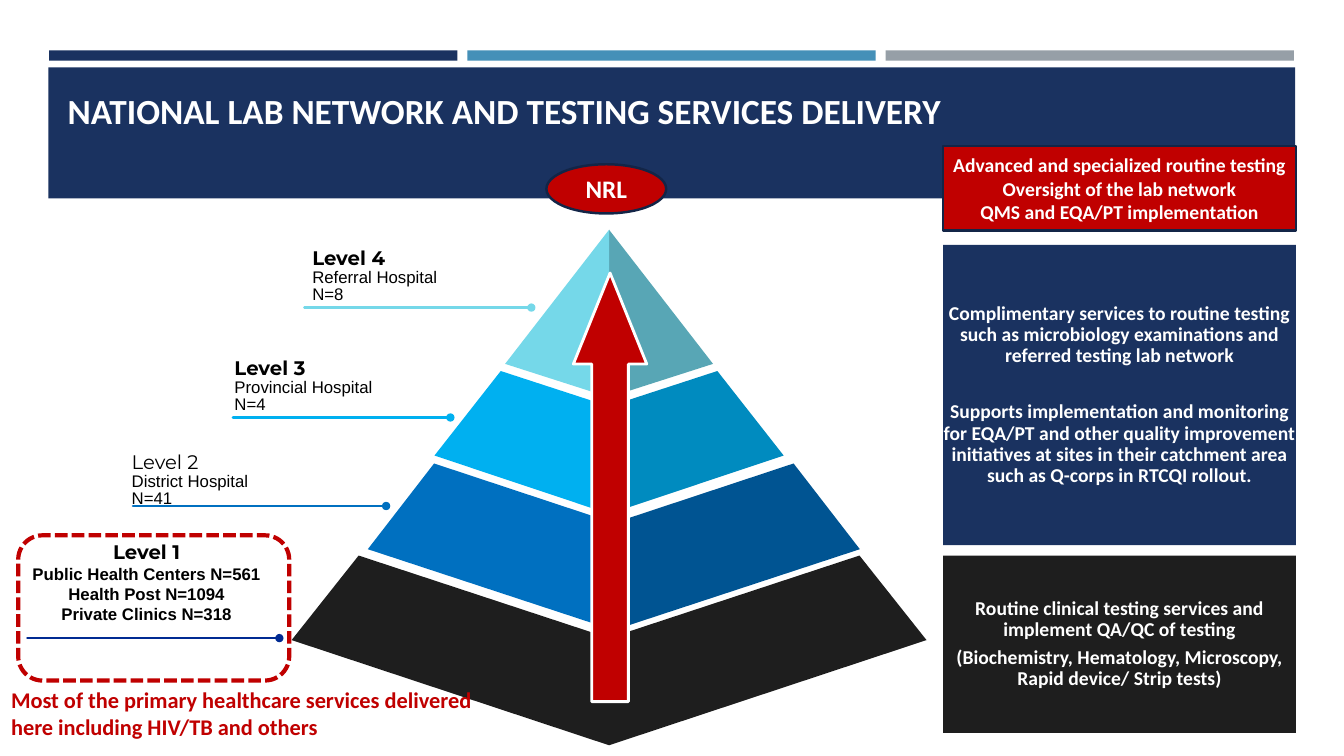
"""Build the slide on the national laboratory network and its testing services."""
from dataclasses import dataclass

from lxml import etree
from pptx import Presentation, util as u
from pptx.dml.color import RGBColor
from pptx.enum import dml, shapes, text
from pptx.oxml.ns import qn


@dataclass(frozen=True)
class Theme:
    navy: str = "1A3260"
    steel: str = "4590B8"
    grey: str = "969FA7"
    outline: str = "132547"
    red: str = "C00000"
    white: str = "FFFFFF"
    black: str = "000000"
    charcoal: str = "1E1E1E"
    ink_blue: str = "002A92"
    blue: str = "0070C0"
    deep_blue: str = "005492"
    sky: str = "00B0F0"
    deep_sky: str = "008BBF"
    aqua: str = "75D8E9"
    deep_aqua: str = "58A6B5"
    body_font: str = "Calibri"
    level_font: str = "Montserrat"
    detail_font: str = "Arial"
    title_size: float = 25.2
    badge_size: int = 18
    caption_size: int = 16
    panel_size: int = 14
    level_size: int = 14
    detail_size: int = 12


theme = Theme()


def paint(shape, fill=None, line=None, width=1.75):
    shape.shadow.inherit = False
    if fill:
        shape.fill.solid()
        shape.fill.fore_color.rgb = RGBColor.from_string(fill)
    else:
        shape.fill.background()
    if line:
        shape.line.color.rgb = RGBColor.from_string(line)
        shape.line.width = u.Pt(width)
    else:
        shape.line.fill.background()


def write(frame, lines, size, color=theme.white, font=theme.body_font, bold=True,
          align=text.PP_ALIGN.CENTER, spacing=1.0, gap=0):
    frame.word_wrap = True
    for index, line in enumerate(lines):
        paragraph = frame.paragraphs[0] if index == 0 else frame.add_paragraph()
        paragraph.text = line
        paragraph.alignment = align
        paragraph.line_spacing = spacing
        paragraph.space_before = u.Pt(gap if index else 0)
        paragraph.font.size = u.Pt(size)
        paragraph.font.name = font
        paragraph.font.bold = bold
        paragraph.font.color.rgb = RGBColor.from_string(color)


deck = Presentation()
deck.slide_width, deck.slide_height = u.Cm(33.87), u.Cm(19.05)
slide = deck.slides.add_slide(deck.slide_layouts[5])
canvas = slide.shapes
kinds = shapes.MSO_SHAPE

for column, color in enumerate((theme.navy, theme.steel, theme.grey)):
    bar = canvas.add_shape(kinds.RECTANGLE, u.Cm(1.24 + 10.54 * column), u.Cm(1.27),
                           u.Cm(10.29), u.Cm(0.26))
    paint(bar, color)
banner = canvas.add_shape(kinds.RECTANGLE, u.Cm(1.22), u.Cm(1.7), u.Cm(31.42), u.Cm(3.3))
paint(banner, theme.navy)

title = canvas.title
title.left, title.top, title.width, title.height = u.Cm(1.45), u.Cm(1.42), u.Cm(31.22), u.Cm(2.03)
title.text_frame.vertical_anchor = text.MSO_ANCHOR.BOTTOM
write(title.text_frame, ["NATIONAL LAB NETWORK AND TESTING SERVICES DELIVERY"],
      theme.title_size, align=text.PP_ALIGN.LEFT)
title.element.getparent().append(title.element)

# Tier columns: seam x, half widths, then side and seam heights at top and bottom
tiers = [
    (15.35, 6.31, 8.0, 14.0, 16.08, 16.13, 18.78, theme.charcoal, theme.charcoal),
    (15.47, 4.53, 6.2, 11.68, 13.18, 13.84, 15.88, theme.blue, theme.deep_blue),
    (15.35, 2.73, 4.4, 9.35, 10.24, 11.48, 12.95, theme.sky, theme.deep_sky),
    (15.35, 0, 2.62, 5.79, 5.79, 9.17, 10.01, theme.aqua, theme.deep_aqua),
]
for seam, top_half, base_half, top_side, top_seam, base_side, base_seam, light, dark in tiers:
    faces = [
        (side, [(seam + way * top_half, top_side), (seam, top_seam),
                (seam, base_seam), (seam + way * base_half, base_side)])
        for way, side in ((1, dark), (-1, light))
    ]
    if top_half:
        faces.insert(0, (theme.white, [
            (seam + top_half, top_side), (seam, 2 * top_side - top_seam),
            (seam - top_half, top_side), (seam, top_seam)]))
    for color, corners in faces:
        points = [(u.Cm(x), u.Cm(y)) for x, y in corners]
        outline = canvas.build_freeform(*points[0])
        outline.add_line_segments(points[1:], close=True)
        paint(outline.convert_to_shape(), color)

left, center = text.PP_ALIGN.LEFT, text.PP_ALIGN.CENTER
levels = [
    ("Level 1", ["Public Health Centers N=561", "Health Post N=1094", "Private Clinics N=318"],
     (0.48, 13.49, 6.43, 2.39), (0.69, 7.04, 16.08), theme.ink_blue, True, True, center, 1.0),
    ("Level 2", ["District Hospital", "N=41"],
     (3.07, 11.3, 4.19, 2.08), (3.35, 9.73, 12.75), theme.blue, False, False, left, 0.85),
    ("Level 3", ["Provincial Hospital", "N=4"],
     (5.66, 8.94, 4.19, 1.83), (5.87, 11.35, 10.52), theme.sky, True, False, left, 0.85),
    ("Level 4", ["Referral Hospital N=8"],
     (7.62, 6.17, 4.19, 1.63), (7.67, 13.39, 7.75), theme.aqua, True, False, left, 0.85),
]
for name, sites, box, (start, end, height), color, name_bold, site_bold, align, spacing in levels:
    label = canvas.add_textbox(*map(u.Cm, box)).text_frame
    write(label, [name, *sites], theme.detail_size, theme.black, theme.detail_font,
          site_bold, align, spacing)
    heading = label.paragraphs[0].font
    heading.name, heading.size, heading.bold = theme.level_font, u.Pt(theme.level_size), name_bold

    leader = canvas.add_connector(shapes.MSO_CONNECTOR.STRAIGHT, u.Cm(start), u.Cm(height),
                                  u.Cm(end), u.Cm(height))
    leader.line.color.rgb = RGBColor.from_string(color)
    leader.line.width = u.Pt(1.75)
    properties = leader.element.spPr
    stroke = properties.find(qn("a:ln"))
    stroke.set("cap", "rnd")
    etree.SubElement(stroke, qn("a:tailEnd"), type="oval")
    etree.SubElement(properties, qn("a:effectLst"))

referral_arrow = canvas.add_shape(kinds.UP_ARROW, u.Cm(14.45), u.Cm(6.88), u.Cm(1.85), u.Cm(10.8))
referral_arrow.adjustments[0], referral_arrow.adjustments[1] = 0.5, 1.24
paint(referral_arrow, theme.red, theme.white, 2)

reference_lab = canvas.add_shape(kinds.OVAL, u.Cm(13.77), u.Cm(4.14), u.Cm(3.02), u.Cm(1.24))
paint(reference_lab, theme.red, theme.outline)
reference_lab.text_frame.vertical_anchor = text.MSO_ANCHOR.MIDDLE
write(reference_lab.text_frame, ["NRL"], theme.badge_size)

services = [
    (3.68, 2.13, theme.red, theme.outline, 1.0, 0,
     ["Advanced and specialized routine testing", "Oversight of the lab network",
      "QMS and EQA/PT implementation"]),
    (6.17, 7.57, theme.navy, None, 0.9, 25,
     ["Complimentary services to routine testing such as microbiology examinations and "
      "referred testing lab network",
      "Supports implementation and monitoring for EQA/PT and other quality improvement "
      "initiatives at sites in their catchment area such as Q-corps in RTCQI rollout."]),
    (14.0, 4.47, theme.charcoal, None, 0.9, 5,
     ["Routine clinical testing services and implement QA/QC of testing",
      "(Biochemistry, Hematology, Microscopy, Rapid device/ Strip tests)"]),
]
for top, height, fill, line, spacing, gap, duties in services:
    panel = canvas.add_shape(kinds.RECTANGLE, u.Cm(23.77), u.Cm(top), u.Cm(8.89), u.Cm(height))
    paint(panel, fill, line)
    panel.text_frame.margin_left = panel.text_frame.margin_right = 0
    panel.text_frame.vertical_anchor = text.MSO_ANCHOR.MIDDLE
    write(panel.text_frame, duties, theme.panel_size, spacing=spacing, gap=gap)

primary_care = canvas.add_shape(kinds.ROUNDED_RECTANGLE, u.Cm(0.46), u.Cm(13.49),
                                u.Cm(6.83), u.Cm(3.66))
paint(primary_care, line=theme.red, width=3)
primary_care.line.dash_style = dml.MSO_LINE.SQUARE_DOT

caption = canvas.add_textbox(u.Cm(0.03), u.Cm(17.17), u.Cm(12.55), u.Cm(1.63))
write(caption.text_frame,
      ["Most of the primary healthcare services delivered here including HIV/TB and others"],
      theme.caption_size, theme.red, align=left)

deck.save("out.pptx")
